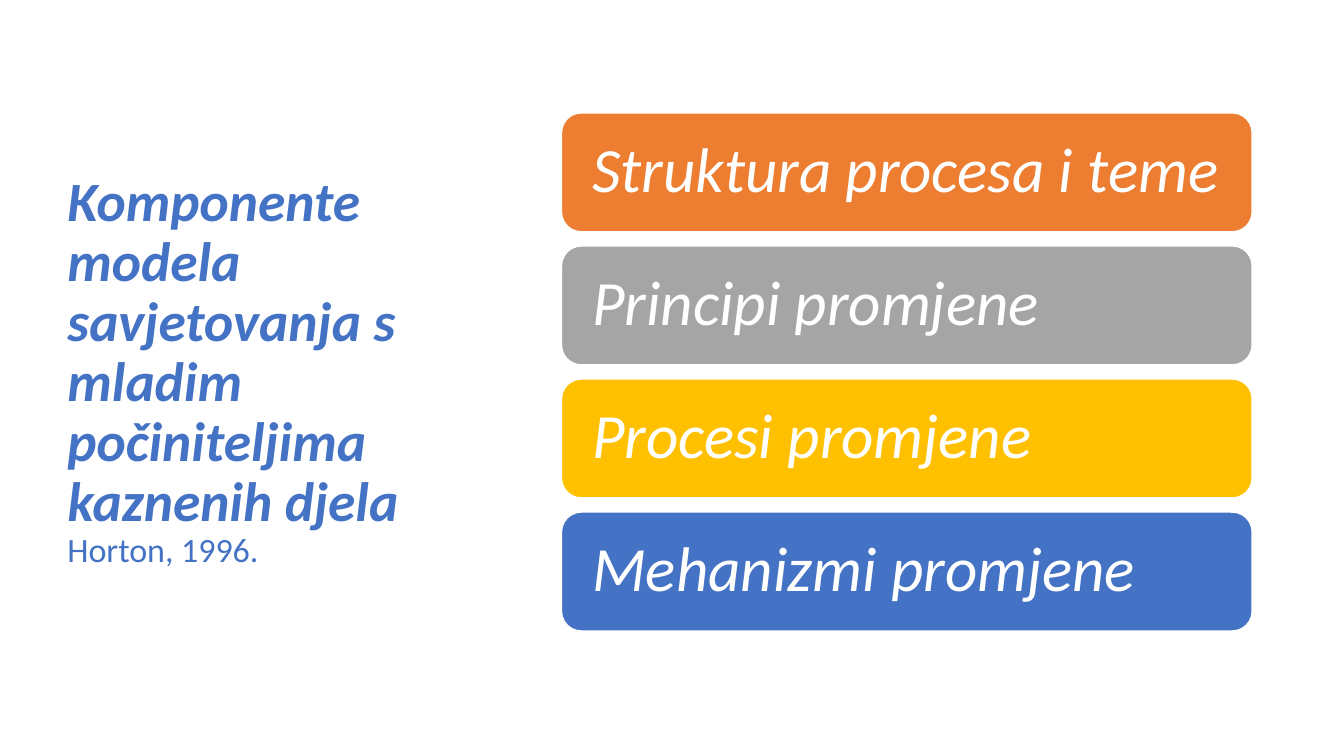
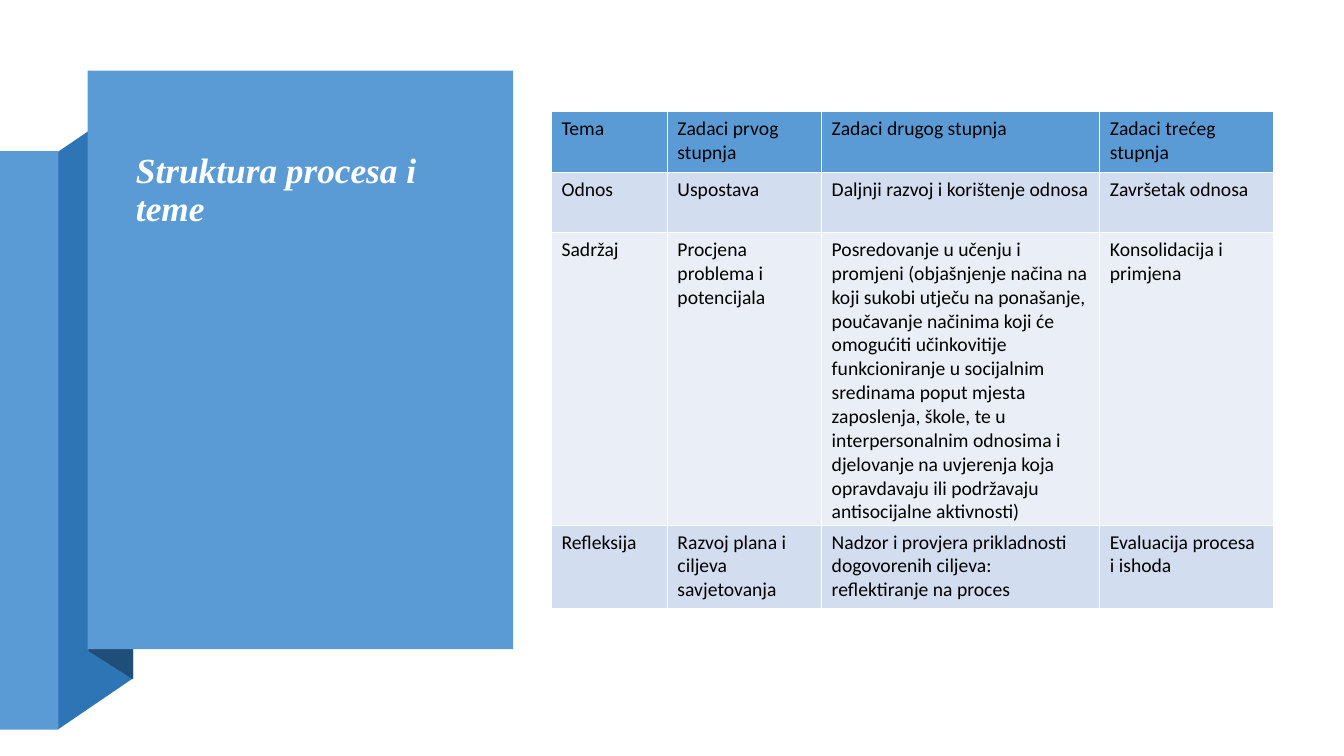
from dataclasses import dataclass

from lxml import etree
from pptx import Presentation, util as u
from pptx.dml import color
from pptx.enum import shapes, text
from pptx.oxml import ns


@dataclass(frozen=True)
class Theme:
    font: str = "Calibri"
    serif: str = "Times New Roman"
    white: str = "FFFFFF"
    black: str = "000000"
    blue: str = "4472C4"
    orange: str = "ED7D31"
    grey: str = "A5A5A5"
    gold: str = "FFC000"
    sky: str = "5B9BD5"
    ribbon: str = "2E75B6"
    fold: str = "1F4E79"
    band_dark: str = "D2DEEF"
    band_light: str = "EAEFF7"
    heading: float = 39.6
    source: float = 24.3
    bar: float = 45
    panel_title: float = 25.2
    cell: float = 14


theme = Theme()
rgb = color.RGBColor.from_string

deck = Presentation()
deck.slide_width, deck.slide_height = u.Inches(13.33), u.Inches(7.5)
# The grid has 100 columns and 100 rows.
COLUMN, ROW = deck.slide_width / 100, deck.slide_height / 100


def grid(*lengths):
    """Turn alternating column and row counts into slide lengths."""
    return [u.Emu(round(length * (ROW if i % 2 else COLUMN))) for i, length in enumerate(lengths)]


def write(frame, words, size, ink, font=theme.font, bold=False, italic=False,
          spacing=0.9, anchor=text.MSO_ANCHOR.MIDDLE):
    """Fill the first paragraph, or add one when the frame already has text."""
    frame.word_wrap = True
    frame.vertical_anchor = anchor
    para = frame.add_paragraph() if frame.text else frame.paragraphs[0]
    para.alignment = text.PP_ALIGN.LEFT
    para.line_spacing = spacing
    span = para.add_run()
    span.text = words
    span.font.name, span.font.size = font, u.Pt(size)
    span.font.bold, span.font.italic = bold, italic
    span.font.color.rgb = rgb(ink)


blank = deck.slide_layouts[6]

# Slide 1: heading and four bars
page = deck.slides.add_slide(blank)
heading = page.shapes.add_textbox(*grid(4.28, 9.07, 31.2, 80.27)).text_frame
write(heading, "Komponente modela savjetovanja s mladim počiniteljima kaznenih djela",
      theme.heading, theme.blue, bold=True, italic=True)
write(heading, "Horton, 1996.", theme.source, theme.blue)

bars = [
    ("Struktura procesa i teme", theme.orange),
    ("Principi promjene", theme.grey),
    ("Procesi promjene", theme.gold),
    ("Mehanizmi promjene", theme.blue),
]
for i, (label, fill) in enumerate(bars):
    bar = page.shapes.add_shape(shapes.MSO_SHAPE.ROUNDED_RECTANGLE,
                                *grid(41.78, 14.93 + 17.6 * i, 51.39, 15.73))
    bar.shadow.inherit = False
    bar.fill.solid()
    bar.fill.fore_color.rgb = rgb(fill)
    bar.line.color.rgb = rgb(theme.white)
    bar.line.width = u.Pt(1)
    bar.text_frame.margin_left = bar.text_frame.margin_right = grid(1.85)[0]
    write(bar.text_frame, label, theme.bar, theme.white, italic=True)

# Slide 2: folded ribbon with title panel, and table
page = deck.slides.add_slide(blank)
ribbon_parts = [
    (theme.ribbon, [(4.28, 96.53), (9.9, 89.73), (9.9, 13.33), (4.28, 20.13)]),
    (theme.sky, (0, 20, 4.35, 76.53)),
    (theme.fold, [(6.6, 86.13), (9.9, 89.87), (9.9, 13.2), (6.6, 9.33)]),
    (theme.sky, (6.53, 9.33, 31.65, 76.53)),
]
for fill, outline in ribbon_parts:
    if isinstance(outline, list):
        start, *corners = [grid(*corner) for corner in outline]
        builder = page.shapes.build_freeform(*start)
        builder.add_line_segments(corners, close=True)
        part = builder.convert_to_shape()
    else:
        part = page.shapes.add_shape(shapes.MSO_SHAPE.RECTANGLE, *grid(*outline))
    part.shadow.inherit = False
    part.fill.solid()
    part.fill.fore_color.rgb = rgb(fill)
    part.line.fill.background()

title = page.shapes.add_textbox(*grid(9.38, 14.53, 26.1, 21.47)).text_frame
write(title, "Struktura procesa i teme", theme.panel_title, theme.white,
      font=theme.serif, bold=True, italic=True)

stages = [
    ["Tema", "Zadaci prvog stupnja", "Zadaci drugog stupnja", "Zadaci trećeg stupnja"],
    ["Odnos", "Uspostava", "Daljnji razvoj i korištenje odnosa", "Završetak odnosa"],
    ["Sadržaj", "Procjena problema i potencijala",
     "Posredovanje u učenju i promjeni (objašnjenje načina na koji sukobi utječu na "
     "ponašanje, poučavanje načinima koji će omogućiti učinkovitije funkcioniranje u "
     "socijalnim sredinama poput mjesta zaposlenja, škole, te u interpersonalnim odnosima "
     "i djelovanje na uvjerenja koja opravdavaju ili podržavaju antisocijalne aktivnosti)",
     "Konsolidacija i primjena"],
    ["Refleksija", "Razvoj plana i ciljeva savjetovanja",
     "Nadzor i provjera prikladnosti dogovorenih ciljeva: reflektiranje na proces",
     "Evaluacija procesa i ishoda"],
]
column_widths = [8.63, 11.48, 20.7, 12.9]
row_heights = [8, 8, 38.67, 11.07]
row_fills = [theme.sky, theme.band_dark, theme.band_light, theme.band_dark]

table = page.shapes.add_table(len(stages), len(column_widths), *grid(
    41.03, 14.8, sum(column_widths), sum(row_heights))).table
for column, width in zip(table.columns, column_widths):
    column.width = grid(width)[0]
for row, height, fill, entries in zip(table.rows, row_heights, row_fills, stages):
    row.height = grid(0, height)[1]
    for cell, entry in zip(row.cells, entries):
        properties = cell._tc.get_or_add_tcPr()
        for side in ("lnL", "lnR", "lnT", "lnB"):
            border = etree.SubElement(properties, ns.qn(f"a:{side}"), w=str(u.Pt(1)))
            paint = etree.SubElement(border, ns.qn("a:solidFill"))
            etree.SubElement(paint, ns.qn("a:srgbClr"), val=theme.white)
        cell.fill.solid()
        cell.fill.fore_color.rgb = rgb(fill)
        write(cell.text_frame, entry, theme.cell, theme.black, spacing=1.0,
              anchor=text.MSO_ANCHOR.TOP)

deck.save("out.pptx")
